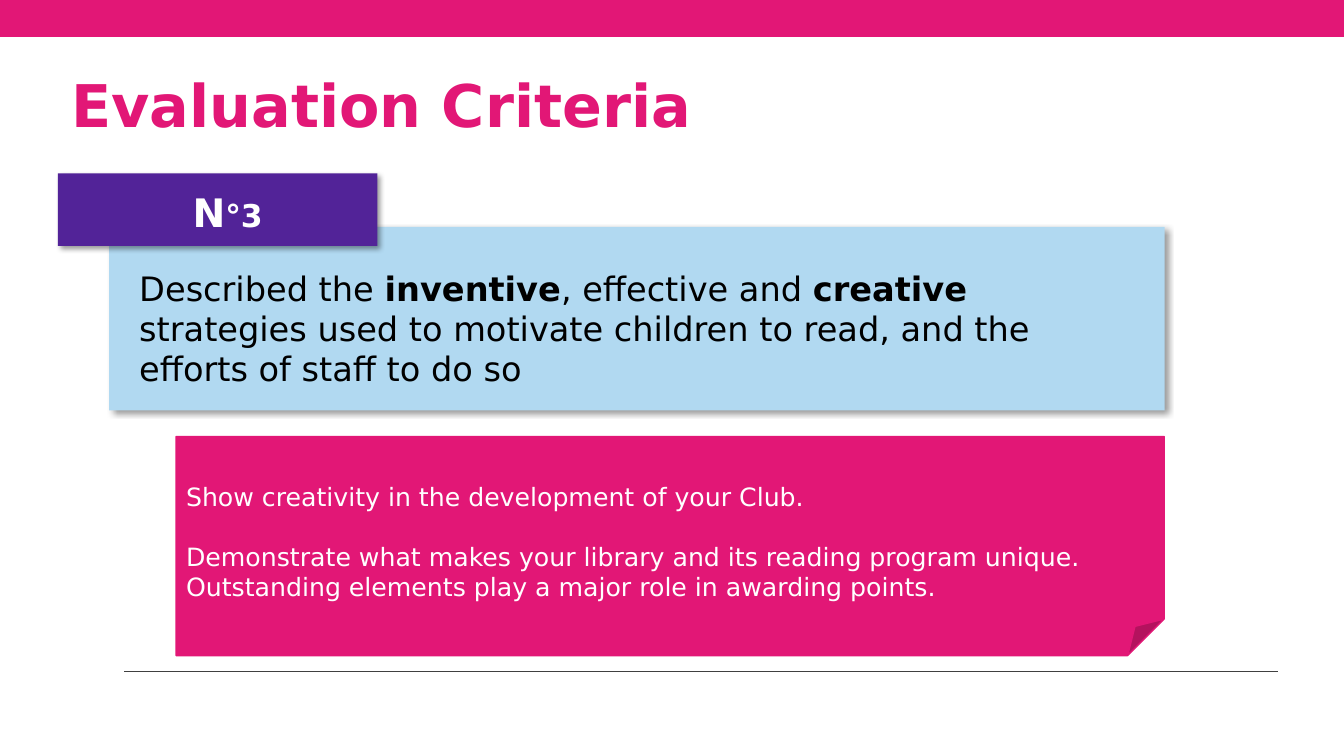
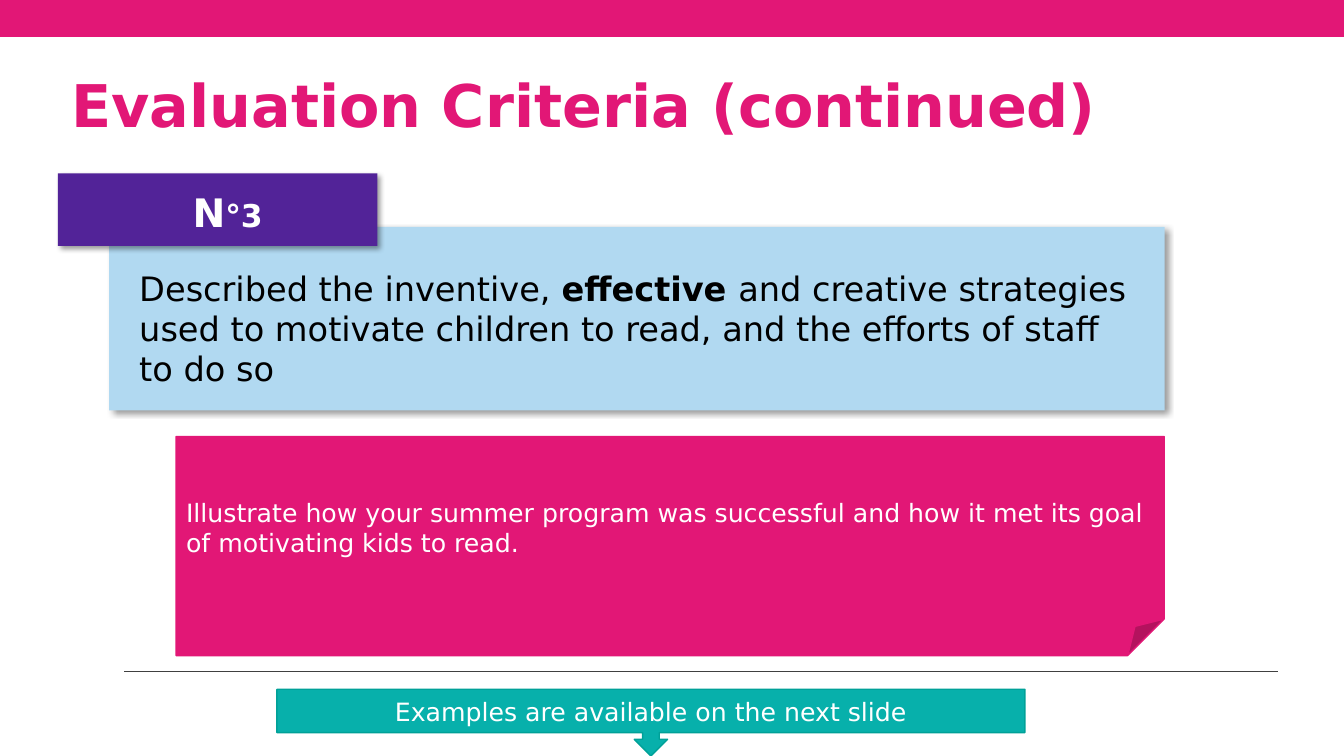
"""Build two slides on the third evaluation criterion of a reading club award."""
import pptx
import pptx.util
import pptx.oxml
import pptx.oxml.ns
import pptx.dml.color
import pptx.enum.shapes
import pptx.enum.text
import lxml.etree

Cm = pptx.util.Cm
Pt = pptx.util.Pt
SHAPE = pptx.enum.shapes.MSO_SHAPE
ANCHOR = pptx.enum.text.MSO_ANCHOR
ALIGN = pptx.enum.text.PP_ALIGN
FONT = "DejaVu Sans"
COLORS = {
    "pink": "E21776",
    "purple": "522398",
    "sky": "B1D9F1",
    "teal": "07B0AB",
    "teal_edge": "00A198",
    "rule": "404040",
    "black": "000000",
    "white": "FFFFFF",
}
RGB = {k: pptx.dml.color.RGBColor.from_string(v) for k, v in COLORS.items()}
SHADOW = (
    f'<a:outerShdw {pptx.oxml.ns.nsdecls("a")} blurRad="50800" dist="38100" '
    'dir="2700000" algn="tl" rotWithShape="0"><a:prstClr val="black">'
    '<a:alpha val="40000"/></a:prstClr></a:outerShdw>'
)


def add_box(s, kind, box, fill, line=None, shadow=False):
    sp = s.shapes.add_shape(kind, *[Cm(v) for v in box])
    sp.fill.solid()
    sp.fill.fore_color.rgb = RGB[fill]
    if line:
        sp.line.color.rgb = RGB[line]
        sp.line.width = Pt(1)
    else:
        sp.line.fill.background()
    sp.shadow.inherit = False
    if shadow:
        effects = sp._element.spPr.find(pptx.oxml.ns.qn("a:effectLst"))
        effects.append(pptx.oxml.parse_xml(SHADOW))
    return sp


def write(sp, paras, size, color, anchor=ANCHOR.MIDDLE, align=ALIGN.LEFT,
          insets=(0.25, 0.13, 0.25, 0.13), gap=0):
    tf = sp.text_frame
    tf.word_wrap = True
    tf.vertical_anchor = anchor
    tf.margin_left, tf.margin_top, tf.margin_right, tf.margin_bottom = [Cm(v) for v in insets]
    for i, runs in enumerate(paras):
        p = tf.paragraphs[0] if i == 0 else tf.add_paragraph()
        p.alignment = align
        if i:
            p.space_before = Pt(gap)
        for text, bold in runs:
            r = p.add_run()
            r.text = text
            r.font.name = FONT
            r.font.size = Pt(size)
            r.font.bold = bold
            r.font.color.rgb = RGB[color]
    return tf


SLIDES = [
    {
        "title": "Evaluation Criteria",
        "criterion": [
            ("Described the ", False),
            ("inventive", True),
            (", effective and ", False),
            ("creative", True),
            (" strategies used to motivate children to read, and the efforts of staff to do so", False),
        ],
        "advice": [
            "Show creativity in the development of your Club.",
            "Demonstrate what makes your library and its reading program unique. "
            "Outstanding elements play a major role in awarding points.",
        ],
        "advice_top": 0.83,
        "callout": None,
    },
    {
        "title": "Evaluation Criteria (continued)",
        "criterion": [
            ("Described the inventive, ", False),
            ("effective ", True),
            ("and creative strategies used to motivate children to read, "
             "and the efforts of staff to do so", False),
        ],
        "advice": [
            "Illustrate how your summer program was successful and how it met its goal "
            "of motivating kids to read.",
        ],
        "advice_top": 0.13,
        "callout": "Examples are available on the next slide",
    },
]

prs = pptx.Presentation()
prs.slide_width = Cm(33.87)
prs.slide_height = Cm(19.05)

for content in SLIDES:
    s = prs.slides.add_slide(prs.slide_layouts[6])

    add_box(s, SHAPE.RECTANGLE, (0, 0, 33.87, 0.93), "pink")
    rule = s.shapes.add_connector(pptx.enum.shapes.MSO_CONNECTOR.STRAIGHT,
                                  Cm(3.13), Cm(16.92), Cm(32.2), Cm(16.92))
    rule.line.color.rgb = RGB["rule"]
    rule.line.width = Pt(0.75)
    lxml.etree.SubElement(rule._element.spPr, pptx.oxml.ns.qn("a:effectLst"))

    title = s.shapes.add_textbox(Cm(1.55), Cm(0.93), Cm(30.55), Cm(2.6))
    write(title, [[(content["title"], True)]], 42, "pink", ANCHOR.BOTTOM,
          insets=(0.25, 0.13, 0.25, 0.03))

    criterion = add_box(s, SHAPE.RECTANGLE, (2.75, 5.72, 26.6, 4.62), "sky", shadow=True)
    write(criterion, [content["criterion"]], 24, "black", ANCHOR.TOP,
          insets=(0.76, 1.02, 0.76, 0.51))

    number = add_box(s, SHAPE.RECTANGLE, (1.46, 4.37, 8.05, 1.83), "purple", shadow=True)
    tf = write(number, [[("N°3", True)]], 28, "white", align=ALIGN.CENTER,
               insets=(0.76, 0.38, 0.25, 0.25))
    tf.paragraphs[0].runs[0]._r.get_or_add_rPr().set("cap", "small")

    advice = add_box(s, SHAPE.FOLDED_CORNER, (4.44, 11, 24.9, 5.52), "pink", "pink")
    write(advice, [[(text, False)] for text in content["advice"]], 18, "white",
          insets=(0.25, content["advice_top"], 0.25, 0.13), gap=21)

    if content["callout"]:
        callout = add_box(s, SHAPE.DOWN_ARROW_CALLOUT, (6.98, 17.37, 18.85, 1.68),
                          "teal", "teal_edge")
        write(callout, [[(content["callout"], False)]], 18, "white", align=ALIGN.CENTER)

prs.save("out.pptx")
